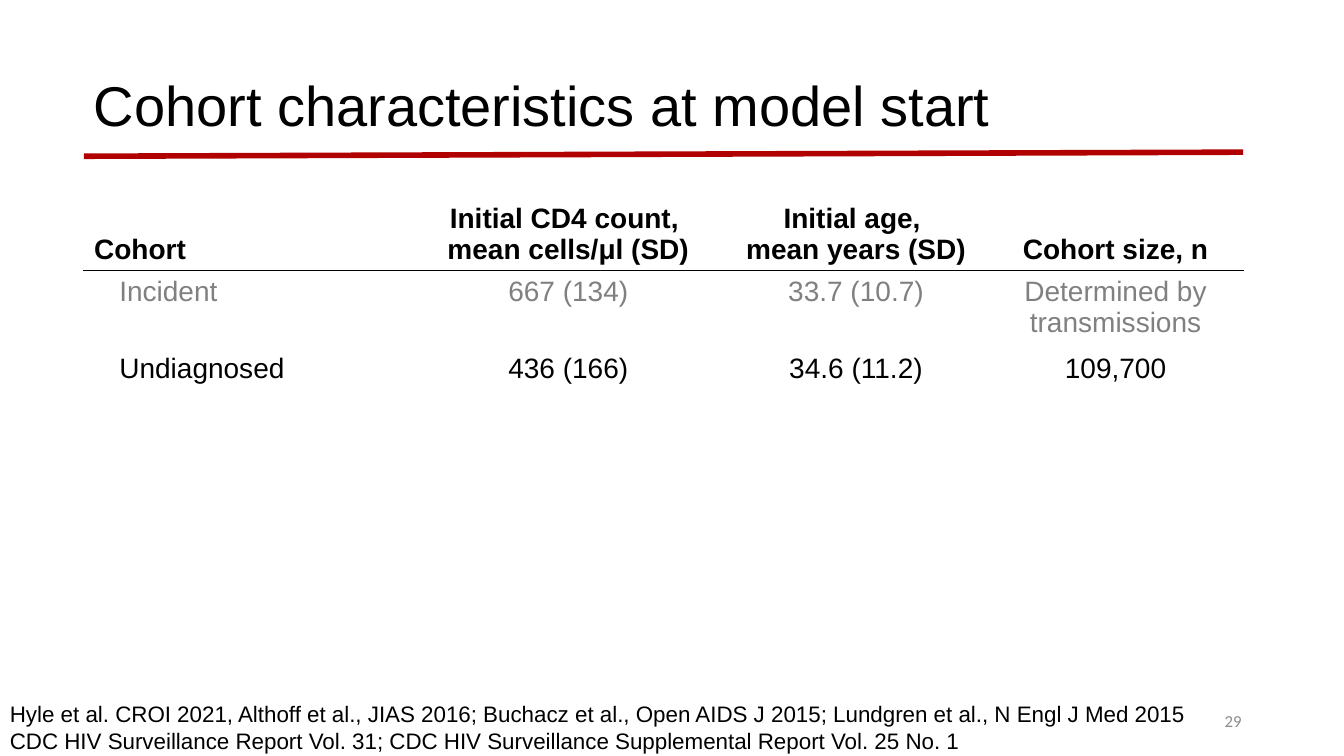
import pptx
import pptx.dml.color
import pptx.enum.shapes
import pptx.enum.text
import pptx.oxml
import pptx.oxml.ns
import pptx.util

Pt = pptx.util.Pt
ALIGN = pptx.enum.text.PP_ALIGN
ANCHOR = pptx.enum.text.MSO_ANCHOR

BLACK, GREY, PALE_GREY, RED = "000000", "808080", "8C8C8C", "B00000"
LEFT, WIDTH = 60, 828


def color(hex_string):
    return pptx.dml.color.RGBColor.from_string(hex_string)


class Page:
    font = "Arial"

    def __init__(self, deck):
        self.slide = deck.slides.add_slide(deck.slide_layouts[6])
        self.shapes = self.slide.shapes

    def fill_frame(self, frame, lines, size, hex_string=BLACK, bold=False,
                   align=ALIGN.LEFT, font=None, spacing=None):
        """Fill a text frame with one paragraph per line."""
        for index, line in enumerate(lines):
            para = frame.paragraphs[0] if index == 0 else frame.add_paragraph()
            para.alignment = align
            para.line_spacing = spacing
            span = para.add_run()
            span.text = line
            span.font.name = font or self.font
            span.font.size = Pt(size)
            span.font.bold = bold
            span.font.color.rgb = color(hex_string)

    def text(self, left, top, width, height, lines, size,
             anchor=ANCHOR.MIDDLE, **style):
        box = self.shapes.add_textbox(Pt(left), Pt(top), Pt(width), Pt(height))
        frame = box.text_frame
        frame.word_wrap = True
        frame.vertical_anchor = anchor
        self.fill_frame(frame, lines, size, **style)

    def line(self, start, end, hex_string, weight):
        rule = self.shapes.add_connector(
            pptx.enum.shapes.MSO_CONNECTOR.STRAIGHT,
            *(Pt(value) for value in (*start, *end)))
        rule.line.color.rgb = color(hex_string)
        rule.line.width = Pt(weight)
        properties = rule._element.spPr
        properties.append(pptx.oxml.parse_xml(
            f'<a:effectLst {pptx.oxml.ns.nsdecls("a")}/>'))

    def border(self, cell, side, hex_string, weight):
        """Draw one cell edge; call before the cell's fill is set."""
        cell._tc.get_or_add_tcPr().append(pptx.oxml.parse_xml(
            f'<a:{side} {pptx.oxml.ns.nsdecls("a")} w="{Pt(weight)}">'
            f'<a:solidFill><a:srgbClr val="{hex_string}"/></a:solidFill>'
            f'</a:{side}>'))

    def table(self, left, top, widths, heights, rows, row_colors, size):
        """Table with a bold header, a rule under it and an indented first column."""
        table = self.shapes.add_table(
            len(rows), len(widths), Pt(left), Pt(top),
            Pt(sum(widths)), Pt(sum(heights))).table
        table.first_row = table.horz_banding = False
        for column, width in zip(table.columns, widths):
            column.width = Pt(width)
        for row, height in zip(table.rows, heights):
            row.height = Pt(height)
        for row_index, row in enumerate(rows):
            header = row_index == 0
            for column_index, lines in enumerate(row):
                cell = table.cell(row_index, column_index)
                first = column_index == 0
                if row_index < 2:
                    self.border(cell, "lnB" if header else "lnT", BLACK, 1)
                cell.fill.background()
                cell.vertical_anchor = ANCHOR.BOTTOM if header else ANCHOR.TOP
                if first and not header:
                    cell.margin_left = Pt(25.2)
                self.fill_frame(cell.text_frame, lines, size,
                                row_colors[row_index], header,
                                ALIGN.LEFT if first else ALIGN.CENTER)


def main():
    deck = pptx.Presentation()
    deck.slide_width, deck.slide_height = Pt(960), Pt(540)
    page = Page(deck)

    page.text(678, 500.4, 216, 28.8, ["29"], 12, hex_string=PALE_GREY,
              align=ALIGN.RIGHT, font="Calibri")
    cohorts = [
        [["Cohort"], ["Initial CD4 count, ", "mean cells/μl (SD)"],
         ["Initial age, ", "mean years (SD)"], ["Cohort size, n"]],
        [["Incident"], ["667 (134)"], ["33.7 (10.7)"],
         ["Determined by transmissions"]],
        [["Undiagnosed"], ["436 (166)"], ["34.6 (11.2)"], ["109,700"]],
    ]
    page.table(LEFT, 138.2, [234.7, 222.5, 188.6, 182.2], [51, 51, 30],
               cohorts, [BLACK, GREY, BLACK], 20)
    page.line((LEFT, 111.6), (LEFT + WIDTH, 108.7), RED, 4)
    page.text(LEFT, 25.2, 867, 104.4, ["Cohort characteristics at model start"],
              40, spacing=0.9)
    page.text(0, 496.8, 867, 65.5, [
        "Hyle et al. CROI 2021, Althoff et al., JIAS 2016; Buchacz et al., "
        "Open AIDS J 2015; Lundgren et al., N Engl J Med 2015",
        "CDC HIV Surveillance Report Vol. 31; "
        "CDC HIV Surveillance Supplemental Report Vol. 25 No. 1",
    ], 16, anchor=ANCHOR.TOP)

    deck.save("out.pptx")


if __name__ == "__main__":
    main()
